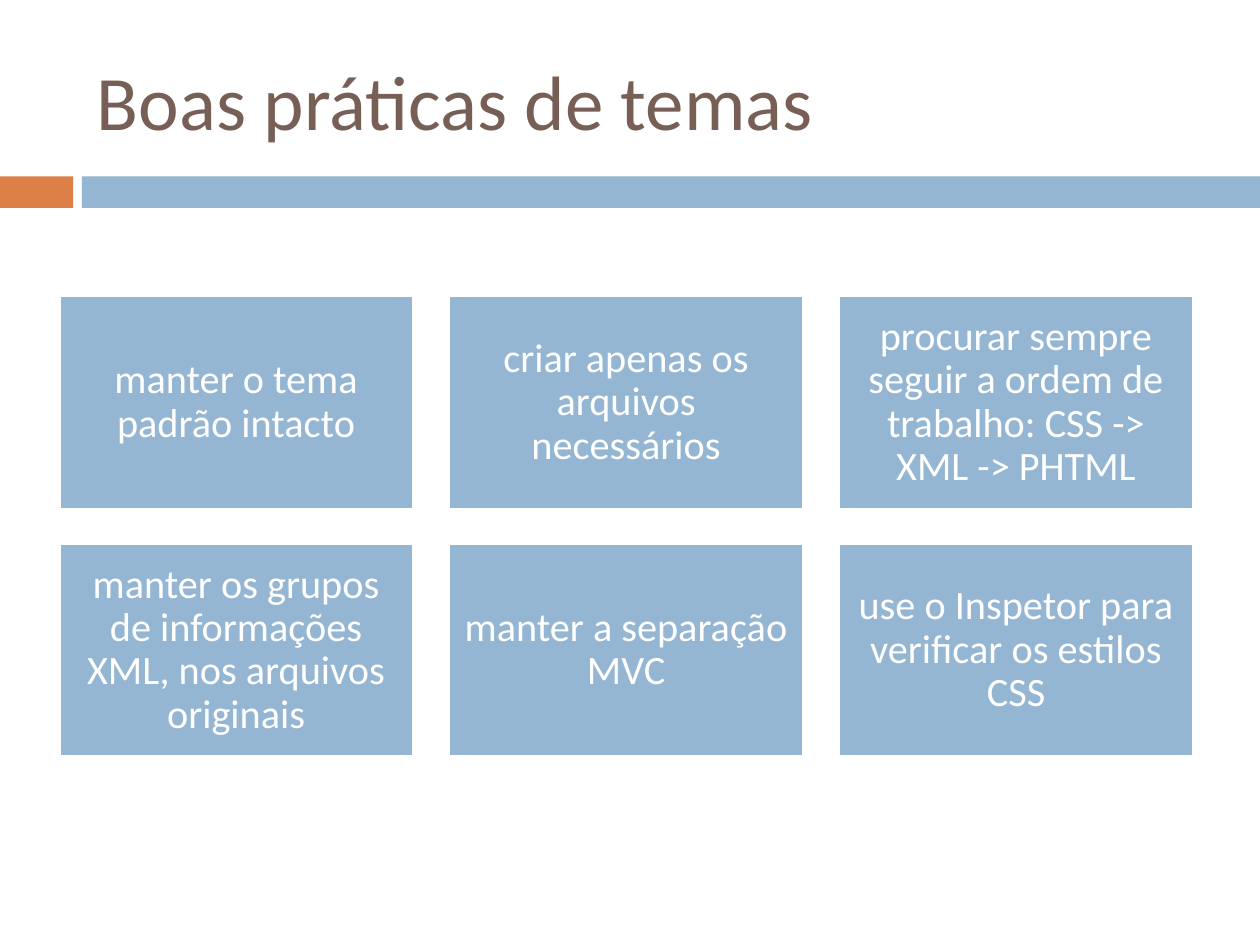
from pptx import Presentation
from pptx.dml.color import RGBColor
from pptx.enum.shapes import MSO_SHAPE
from pptx.enum.text import MSO_ANCHOR, PP_ALIGN
from pptx.util import Inches, Pt

COLORS = {"orange": "DD8047", "blue": "94B6D2", "brown": "775F55", "white": "FFFFFF"}
FONT = "Calibri"

# Card grid, in inches
COLUMNS = 3
GRID_LEFT, GRID_TOP = 0.47, 2.35
CARD_WIDTH, CARD_HEIGHT = 2.81, 1.69
COLUMN_STEP, ROW_STEP = 3.095, 1.965

PRACTICES = [
    "manter o tema padrão intacto",
    "criar apenas os arquivos necessários",
    "procurar sempre seguir a ordem de trabalho: CSS -> XML -> PHTML",
    "manter os grupos de informações XML, nos arquivos originais",
    "manter a separação MVC",
    "use o Inspetor para verificar os estilos CSS",
]


def color(name):
    return RGBColor.from_string(COLORS[name])


def add_rectangle(slide, left, top, width, height, fill):
    shape = slide.shapes.add_shape(
        MSO_SHAPE.RECTANGLE, Inches(left), Inches(top), Inches(width), Inches(height)
    )
    shape.shadow.inherit = False
    shape.fill.solid()
    shape.fill.fore_color.rgb = color(fill)
    shape.line.fill.background()
    return shape


def write_text(shape, text, size, font_color, alignment):
    frame = shape.text_frame
    frame.word_wrap = True
    frame.vertical_anchor = MSO_ANCHOR.MIDDLE
    paragraph = frame.paragraphs[0]
    paragraph.text = text
    paragraph.alignment = alignment
    paragraph.font.name = FONT
    paragraph.font.size = Pt(size)
    paragraph.font.color.rgb = color(font_color)
    return frame


def add_title(slide, text):
    box = slide.shapes.add_textbox(Inches(0.67), Inches(0.25), Inches(8.92), Inches(1.08))
    write_text(box, text, 44, "brown", PP_ALIGN.LEFT)


def add_card(slide, index, text):
    row, column = divmod(index, COLUMNS)
    card = add_rectangle(
        slide,
        GRID_LEFT + column * COLUMN_STEP,
        GRID_TOP + row * ROW_STEP,
        CARD_WIDTH,
        CARD_HEIGHT,
        "blue",
    )
    card.line.color.rgb = color("white")
    card.line.width = Pt(1.5)
    frame = write_text(card, text, 23, "white", PP_ALIGN.CENTER)
    frame.margin_left = frame.margin_right = Inches(0.1)
    frame.margin_top = frame.margin_bottom = Inches(0.1)
    frame.paragraphs[0].line_spacing = 0.9


def main():
    presentation = Presentation()
    presentation.slide_width, presentation.slide_height = Inches(10), Inches(7.5)
    slide = presentation.slides.add_slide(presentation.slide_layouts[6])

    # Header band and title
    add_rectangle(slide, 0, 1.4, 0.58, 0.25, "orange")
    add_rectangle(slide, 0.65, 1.4, 9.35, 0.25, "blue")
    add_title(slide, "Boas práticas de temas")

    # Practice cards
    for index, text in enumerate(PRACTICES):
        add_card(slide, index, text)

    presentation.save("out.pptx")


if __name__ == "__main__":
    main()
